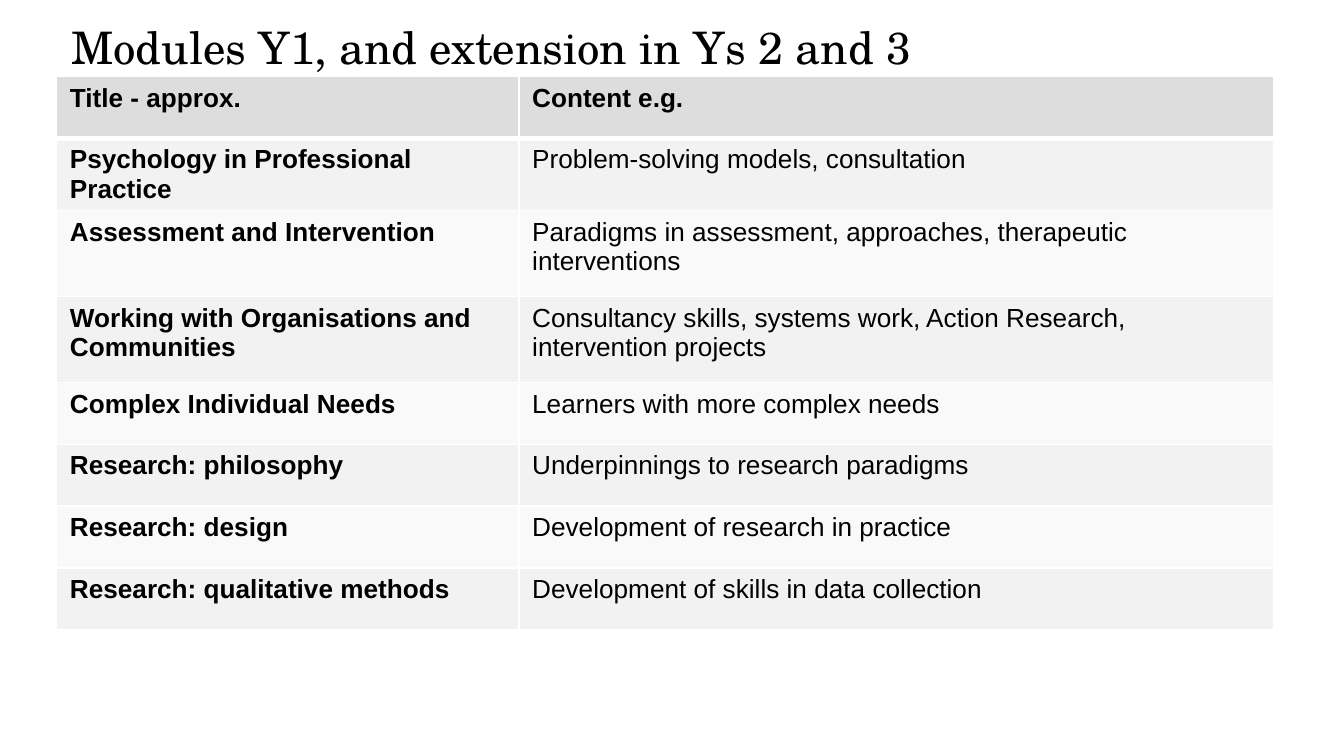
from dataclasses import dataclass

from lxml import etree
from pptx import Presentation
from pptx import util as u
from pptx.dml.color import RGBColor
from pptx.enum import text
from pptx.oxml import ns


@dataclass(frozen=True)
class Theme:
    """Colours, fonts and type sizes of the slide."""
    ink: str = "000000"
    border: str = "FFFFFF"
    header: str = "DDDDDD"
    bands: tuple[str, str] = ("F2F2F2", "F9F9F9")
    title_font: str = "TeX Gyre Schola"
    body_font: str = "Arial"
    title_size: int = 24
    body_size: int = 14
    thin: int = 1
    thick: int = 3


@dataclass(frozen=True)
class Module:
    """One table row, with its height in inches."""
    title: str
    content: str
    height: float = 0.46


THEME = Theme()
WIDTH = u.Inches(10)
HEIGHT = WIDTH * 9 // 16
COLUMN_SHARES = (0.344, 0.562)
MODULES = (
    Module("Title - approx.", "Content e.g."),
    Module("Psychology in Professional Practice", "Problem-solving models, consultation"),
    Module("Assessment and Intervention",
           "Paradigms in assessment, approaches, therapeutic interventions", 0.64),
    Module("Working with Organisations and Communities",
           "Consultancy skills, systems work, Action Research, intervention projects", 0.64),
    Module("Complex Individual Needs", "Learners with more complex needs"),
    Module("Research: philosophy", "Underpinnings to research paradigms"),
    Module("Research: design", "Development of research in practice"),
    Module("Research: qualitative methods", "Development of skills in data collection"),
)


def format_text(text_frame, font_name: str, size: int, bold: bool = False) -> None:
    """Style every run of a text frame."""
    for paragraph in text_frame.paragraphs:
        paragraph.alignment = text.PP_ALIGN.LEFT
        for run in paragraph.runs:
            run.font.name = font_name
            run.font.size = u.Pt(size)
            run.font.bold = bold
            run.font.color.rgb = RGBColor.from_string(THEME.ink)


def add_border(cell, side: str, points: int) -> None:
    """Draw one solid edge of a cell."""
    properties = cell._tc.get_or_add_tcPr()
    line = etree.SubElement(properties, ns.qn(f"a:ln{side}"), w=str(u.Pt(points)))
    fill = etree.SubElement(line, ns.qn("a:solidFill"))
    etree.SubElement(fill, ns.qn("a:srgbClr"), val=THEME.border)


def fill_cell(cell, wording: str, row: int, column: int) -> None:
    """Write and format one table cell."""
    is_header = row == 0
    for side in "LRTB":
        under_header = (row, side) in ((0, "B"), (1, "T"))
        add_border(cell, side, THEME.thick if under_header else THEME.thin)
    color = THEME.header if is_header else THEME.bands[(row - 1) % 2]
    cell.fill.solid()
    cell.fill.fore_color.rgb = RGBColor.from_string(color)
    cell.text_frame.text = wording
    format_text(cell.text_frame, THEME.body_font, THEME.body_size,
                bold=is_header or column == 0)


def add_title(slide, wording: str) -> None:
    """Place the title placeholder at the top of the slide."""
    title = slide.shapes.title
    title.left, title.top = int(WIDTH * 0.043), u.Inches(0.1)
    title.width, title.height = int(WIDTH * 0.85), u.Inches(0.94)
    text_frame = title.text_frame
    text_frame.text = wording
    text_frame.word_wrap = True
    text_frame.auto_size = text.MSO_AUTO_SIZE.NONE
    text_frame.vertical_anchor = text.MSO_ANCHOR.TOP
    format_text(text_frame, THEME.title_font, THEME.title_size)


def add_modules(slide, modules: tuple[Module, ...]) -> None:
    """Draw the table of modules."""
    table = slide.shapes.add_table(
        len(modules), len(COLUMN_SHARES), int(WIDTH * 0.042), u.Inches(0.57),
        int(WIDTH * sum(COLUMN_SHARES)),
        u.Inches(sum(module.height for module in modules))).table
    for column, share in zip(table.columns, COLUMN_SHARES):
        column.width = int(WIDTH * share)
    for row, module in enumerate(modules):
        table.rows[row].height = u.Inches(module.height)
        for column, wording in enumerate((module.title, module.content)):
            fill_cell(table.cell(row, column), wording, row, column)


def main() -> None:
    """Build and save the slide."""
    presentation = Presentation()
    presentation.slide_width, presentation.slide_height = WIDTH, HEIGHT
    slide = presentation.slides.add_slide(presentation.slide_layouts[5])
    add_title(slide, "Modules Y1, and extension in Ys 2 and 3")
    add_modules(slide, MODULES)
    presentation.save("out.pptx")


if __name__ == "__main__":
    main()
